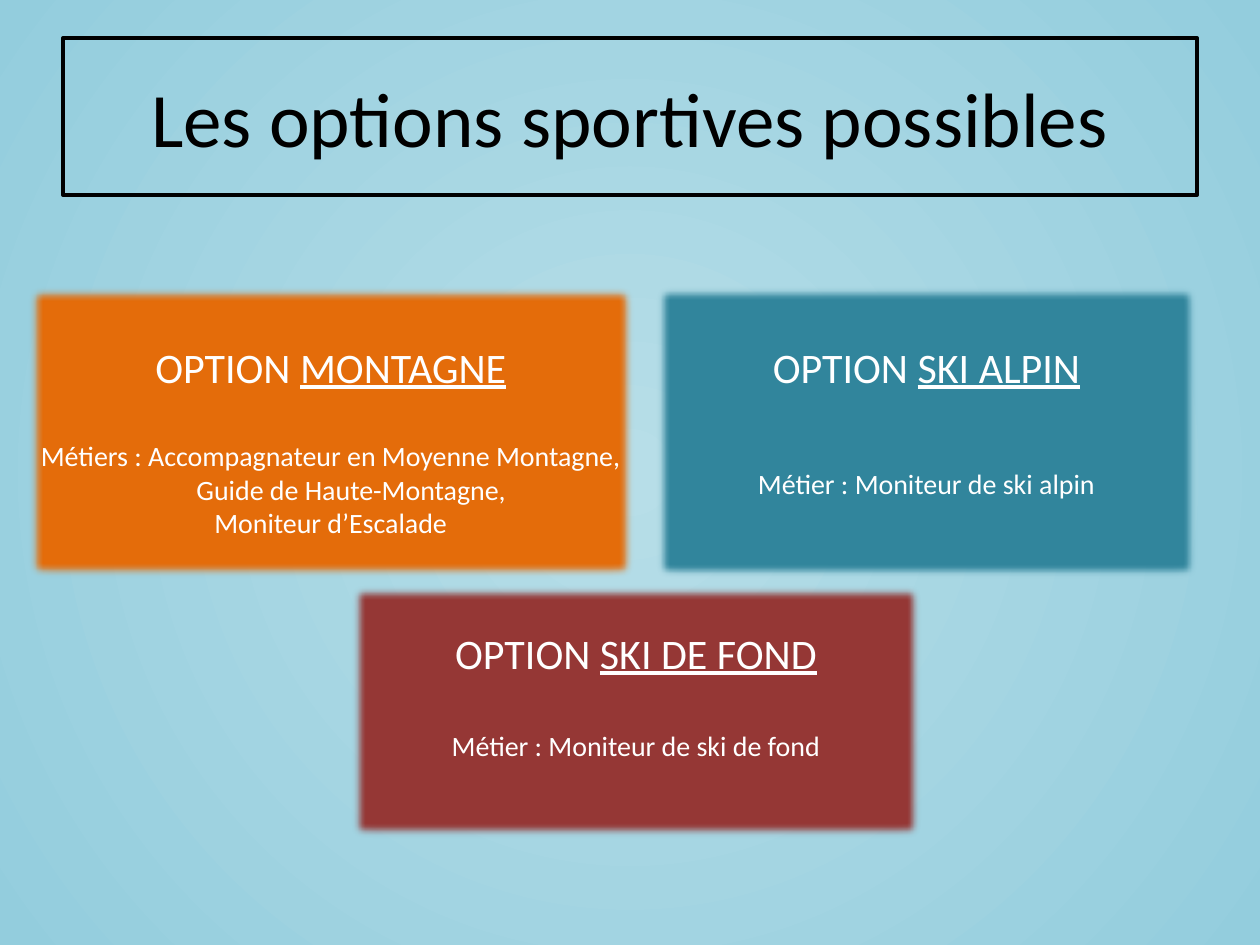
from lxml import etree
from pptx import Presentation
from pptx.dml.color import RGBColor
from pptx.enum import shapes, text
from pptx.oxml import parse_xml
from pptx.oxml.ns import nsdecls, qn
from pptx.util import Pt

TITLE = "Les options sportives possibles"
# box: left, top, width, height; top_space: above the heading; gap: heading to jobs
OPTIONS = [
    dict(name="SKI DE FOND", color="red", box=(198.9, 332.8, 329, 147.6),
         top_space=25.6, gap=29.3,
         jobs=["Métier : Moniteur de ski de fond"]),
    dict(name="SKI ALPIN", color="teal", box=(373.2, 162, 312.5, 170),
         top_space=32.9, gap=42.7,
         jobs=["Métier : Moniteur de ski alpin"]),
    dict(name="MONTAGNE", color="orange", box=(14.4, 162, 349.2, 170),
         top_space=32.9, gap=26.9,
         jobs=["Métiers : Accompagnateur en Moyenne Montagne, Guide de Haute-Montagne, ",
               "Moniteur d’Escalade"]),
]
THEME = dict(
    font="Calibri", title=44, heading=24, job=16,
    black="000000", white="FFFFFF", red="953735", teal="31859C", orange="E46C0A",
    center="B7DEE8", edge="93CDDD", indent=27, soft_edge=5, border=2,
)


def rgb(name):
    return RGBColor.from_string(THEME[name])


def place(shape, box):
    for side, value in zip(("left", "top", "width", "height"), box):
        setattr(shape, side, Pt(value))


def add_run(paragraph, words, size, color, underline=False):
    run = paragraph.add_run()
    run.text = words
    formats = dict(name=THEME["font"], size=Pt(THEME[size]), underline=underline)
    for key, value in formats.items():
        setattr(run.font, key, value)
    run.font.color.rgb = rgb(color)


def hanging_center(paragraph):
    paragraph.alignment = text.PP_ALIGN.CENTER
    properties = paragraph._p.get_or_add_pPr()
    properties.set("marL", str(Pt(THEME["indent"])))
    properties.set("indent", str(-Pt(THEME["indent"])))


def set_background(slide):
    """Fill the background with a circular gradient from the centre."""
    stops = "".join(
        f'<a:gs pos="{position}"><a:srgbClr val="{THEME[name]}"/></a:gs>'
        for position, name in ((0, "center"), (100000, "edge")))
    background = parse_xml(
        f'<p:bg {nsdecls("p", "a")}><p:bgPr><a:gradFill rotWithShape="1">'
        f'<a:gsLst>{stops}</a:gsLst><a:path path="circle">'
        '<a:fillToRect l="50000" t="50000" r="50000" b="50000"/></a:path>'
        '</a:gradFill><a:effectLst/></p:bgPr></p:bg>')
    slide.element.cSld.insert(0, background)


def add_title(slide):
    title = slide.shapes.title
    place(title, (36, 21.6, 648, 90))
    title.line.color.rgb = rgb("black")
    title.line.width = Pt(THEME["border"])
    frame = title.text_frame
    frame.vertical_anchor = text.MSO_ANCHOR.MIDDLE
    frame.auto_size = text.MSO_AUTO_SIZE.NONE
    paragraph = frame.paragraphs[0]
    paragraph.alignment = text.PP_ALIGN.CENTER
    add_run(paragraph, TITLE, "title", "black")


def add_option(slide, option):
    card = slide.shapes.add_shape(
        shapes.MSO_SHAPE.RECTANGLE, *(Pt(value) for value in option["box"]))
    card.fill.solid()
    card.fill.fore_color.rgb = rgb(option["color"])
    card.line.fill.background()
    card.shadow.inherit = False
    effects = card._element.spPr.find(qn("a:effectLst"))
    etree.SubElement(effects, qn("a:softEdge"), rad=str(Pt(THEME["soft_edge"])))

    frame = card.text_frame
    formats = dict(word_wrap=True, vertical_anchor=text.MSO_ANCHOR.TOP,
                   margin_top=Pt(option["top_space"]))
    for key, value in formats.items():
        setattr(frame, key, value)
    heading = frame.paragraphs[0]
    hanging_center(heading)
    add_run(heading, "OPTION ", "heading", "white")
    add_run(heading, option["name"], "heading", "white", underline=True)
    for index, job in enumerate(option["jobs"]):
        paragraph = frame.add_paragraph()
        hanging_center(paragraph)
        paragraph.space_before = Pt(0 if index else option["gap"])
        add_run(paragraph, job, "job", "white")


def main():
    presentation = Presentation()
    presentation.slide_width, presentation.slide_height = Pt(720), Pt(540)
    slide = presentation.slides.add_slide(presentation.slide_layouts[5])
    set_background(slide)
    add_title(slide)
    for option in OPTIONS:
        add_option(slide, option)
    presentation.save("out.pptx")


if __name__ == "__main__":
    main()
